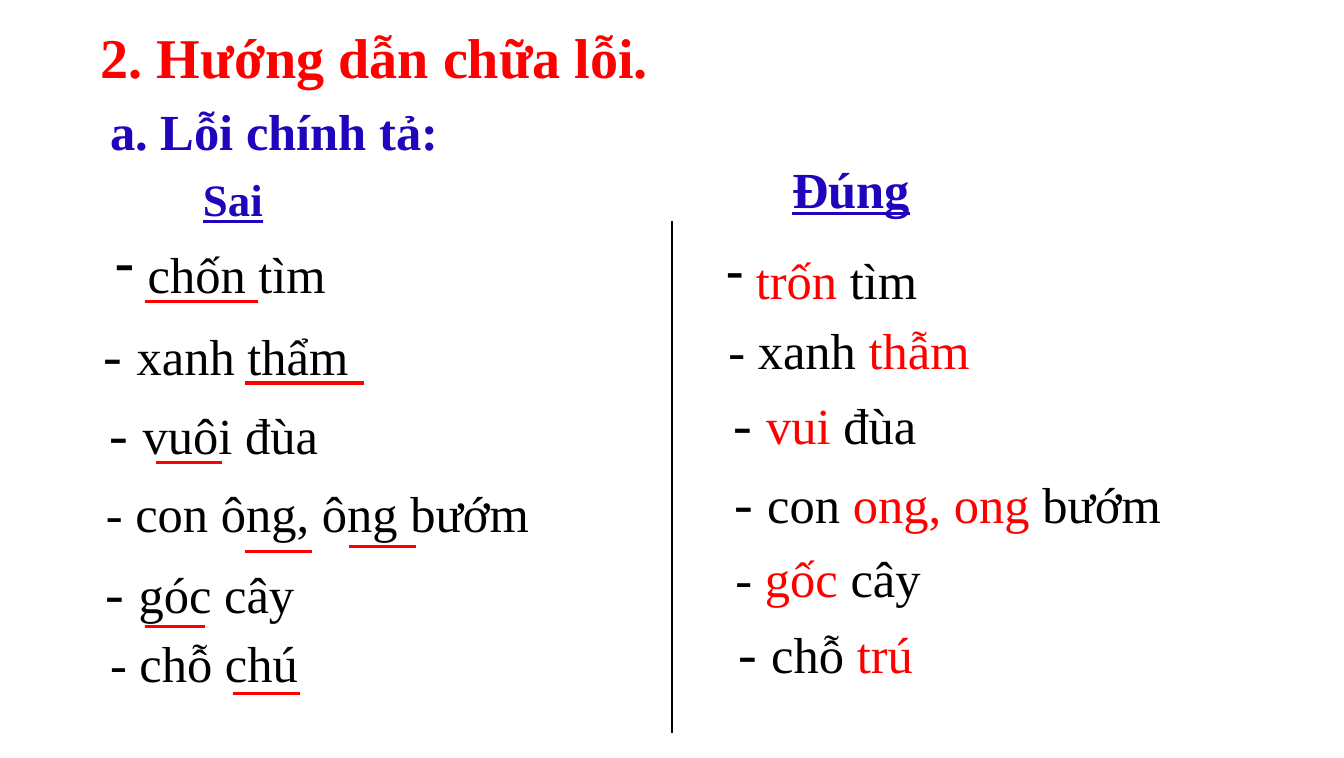
from dataclasses import dataclass

from lxml.etree import SubElement
from pptx import Presentation
from pptx.dml.color import RGBColor
from pptx.enum.shapes import MSO_CONNECTOR as Connector
from pptx.enum.text import MSO_AUTO_SIZE as AutoSize
from pptx.oxml.ns import qn
from pptx.util import Pt

PX = 9144


@dataclass(frozen=True)
class Theme:
    """Colours, font and type sizes of the slide."""
    font: str = "Times New Roman"
    ink: str = "000000"
    red: str = "FF0000"
    blue: str = "1F05BB"
    large: int = 40
    body: int = 36
    small: int = 32


class Page:
    """Draws elements on one slide in one theme."""

    def __init__(self, slide, theme):
        """Keep the slide and its theme."""
        self.slide, self.theme = slide, theme

    def box(self, x, y, w, h, wrap=True):
        """Add a text box and return its first paragraph."""
        sp = self.slide.shapes.add_textbox(x * PX, y * PX, w * PX, h * PX)
        tf = sp.text_frame
        tf.word_wrap = wrap
        tf.auto_size = AutoSize.SHAPE_TO_FIT_TEXT
        return tf.paragraphs[0]

    def run(self, p, text, size=None, color=None, bold=False, underline=False):
        """Add formatted text to a paragraph."""
        r = p.add_run()
        r.text = text
        font = r.font
        font.name = self.theme.font
        font.size = Pt(size or self.theme.body)
        font.color.rgb = RGBColor.from_string(color or self.theme.ink)
        font.bold = bold
        font.underline = underline

    def heading(self, text, x, y, w, h, wrap=True, **style):
        """Add a bold heading."""
        self.run(self.box(x, y, w, h, wrap), text, bold=True, **style)

    def entry(self, text, x, y, w, lead, bullet=False):
        """Add a dashed entry whose words between asterisks are red."""
        p = self.box(x, y, w, 77 if lead == self.theme.large else 71)
        if bullet:
            pPr = p._p.get_or_add_pPr()
            pPr.set("marL", "0")
            pPr.set("indent", "0")
            SubElement(pPr, qn("a:buFontTx"))
            SubElement(pPr, qn("a:buChar")).set("char", "-")
        self.run(p, " " if bullet else "- ", size=lead)
        for i, part in enumerate(text.split("*")):
            if part:
                self.run(p, part, color=self.theme.red if i % 2 else None)

    def line(self, x1, y1, x2, y2, color, width):
        """Add a straight line."""
        ends = (n * PX for n in (x1, y1, x2, y2))
        s = self.slide.shapes.add_connector(Connector.STRAIGHT, *ends)
        s.line.color.rgb = RGBColor.from_string(color)
        s.line.width = Pt(width)
        SubElement(s._element.spPr, qn("a:effectLst"))


def main():
    """Build the spelling correction slide."""
    prs = Presentation()
    prs.slide_width, prs.slide_height = 1330 * PX, 750 * PX
    theme = Theme()
    page = Page(prs.slides.add_slide(prs.slide_layouts[6]), theme)
    large, body = theme.large, theme.body

    page.heading("2. Hướng dẫn chữa lỗi.", 90, 17, 576, 77, size=large, color=theme.red)
    page.heading("a. Lỗi chính tả:", 99, 94, 348, 71, wrap=False, color=theme.blue)
    page.heading("Sai", 191, 165, 157, 64, size=theme.small, color=theme.blue, underline=True)
    page.heading("Đúng", 774, 151, 138, 71, wrap=False, color=theme.blue, underline=True)
    page.line(665, 219, 665, 725, theme.ink, 0.75)

    wrong = [
        ("chốn tìm", 104, 230, 302, large, True),
        ("xanh thẩm", 93, 311, 495, large),
        ("vuôi đùa", 99, 389, 443, large),
        ("con ông, ông bướm", 95, 472, 551, body),
        ("góc cây", 95, 547, 576, large),
        ("chỗ chú", 99, 620, 318, body),
    ]
    right = [
        ("*trốn *tìm", 709, 241, 266, body, True),
        ("xanh *thẫm*", 711, 311, 366, body),
        ("*vui *đùa", 716, 379, 432, large),
        ("con *ong, ong *bướm", 717, 458, 521, large),
        ("*gốc *cây", 718, 536, 432, body),
        ("chỗ *trú*", 721, 606, 324, large),
    ]
    for entry in wrong + right:
        page.entry(*entry)

    error_marks = [
        (144, 255, 298), (242, 360, 379), (154, 220, 458), (242, 309, 546),
        (345, 412, 541), (144, 203, 620), (231, 297, 686),
    ]
    for x1, x2, y in error_marks:
        page.line(x1, y, x2, y, theme.red, 2.25)

    prs.save("out.pptx")


if __name__ == "__main__":
    main()
